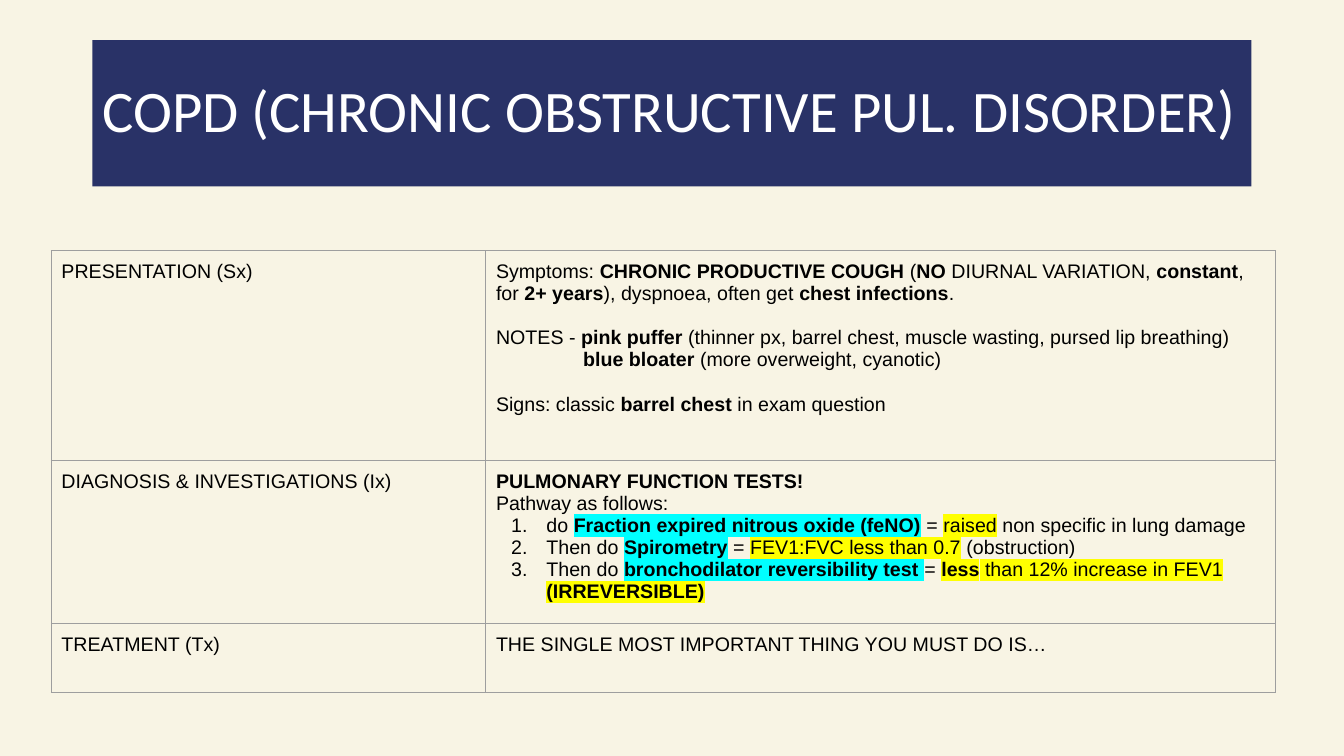
"""Build the COPD summary slide."""
from dataclasses import dataclass

from lxml import etree
from pptx import Presentation
from pptx.dml.color import RGBColor
from pptx.enum.shapes import MSO_SHAPE
from pptx.enum.text import MSO_ANCHOR, PP_ALIGN
from pptx.oxml.ns import qn
from pptx.util import Pt

RECTANGLE = MSO_SHAPE.RECTANGLE
MIDDLE = MSO_ANCHOR.MIDDLE
LEFT = PP_ALIGN.LEFT

CREAM = RGBColor(0xF8, 0xF4, 0xE4)
NAVY = RGBColor(0x29, 0x32, 0x67)
WHITE = RGBColor(0xFF, 0xFF, 0xFF)
BLACK = RGBColor(0x00, 0x00, 0x00)
GREY = RGBColor(0x9E, 0x9E, 0x9E)
CYAN = RGBColor(0x00, 0xFF, 0xFF)
YELLOW = RGBColor(0xFF, 0xFF, 0x00)

COLUMN_WIDTHS = (310.4, 564)
ROW_HEIGHTS = (149.8, 116.6, 49)
CELL_INSET = Pt(7.2)
BORDER_WIDTH = Pt(0.75)
BLANK_LINE = 16


@dataclass(frozen=True)
class Span:
    text: str
    bold: bool = False
    highlight: RGBColor | None = None


@dataclass(frozen=True)
class Line:
    spans: tuple[Span, ...]
    space_before: float = 0
    indent: float = 0
    hanging: float = 0


def plain(text: str, highlight: RGBColor | None = None) -> Span:
    return Span(text, highlight=highlight)


def strong(text: str, highlight: RGBColor | None = None) -> Span:
    return Span(text, True, highlight)


def step(*spans: Span) -> Line:
    return Line(spans, indent=36, hanging=25.2)


ROWS = (
    ("PRESENTATION (Sx)", (
        Line((plain("Symptoms: "), strong("CHRONIC PRODUCTIVE COUGH"), plain(" ("),
              strong("NO"), plain(" DIURNAL VARIATION, "), strong("constant"),
              plain(", for "), strong("2+ years"), plain("), dyspnoea, often get "),
              strong("chest infections"), plain("."))),
        Line((plain("NOTES - "), strong("pink puffer"),
              plain(" (thinner px, barrel chest, muscle wasting, pursed lip breathing)")),
             space_before=BLANK_LINE),
        Line((strong("blue bloater "), plain("(more overweight, cyanotic)")), indent=62.3),
        Line((plain("Signs: classic "), strong("barrel chest"), plain(" in exam question")),
             space_before=BLANK_LINE),
    )),
    ("DIAGNOSIS & INVESTIGATIONS (Ix)", (
        Line((strong("PULMONARY FUNCTION TESTS!"),)),
        Line((plain("Pathway as follows:"),)),
        step(plain("do "), strong("Fraction expired nitrous oxide (feNO)", CYAN),
             plain(" = "), plain("raised", YELLOW), plain(" non specific in lung damage")),
        step(plain("Then do "), strong("Spirometry", CYAN), plain(" = "),
             plain("FEV1:FVC less than 0.7", YELLOW), plain(" (obstruction)")),
        step(plain("Then do "), strong("bronchodilator reversibility test", CYAN),
             plain(" ", CYAN), plain("= "), strong("less", YELLOW),
             plain(" than 12% increase in FEV1 ", YELLOW), strong("(IRREVERSIBLE)", YELLOW)),
    )),
    ("TREATMENT (Tx)", (
        Line((plain("THE SINGLE MOST IMPORTANT THING YOU MUST DO IS…"),)),
    )),
)


def add_color(parent, tag: str, color: RGBColor) -> None:
    holder = etree.SubElement(parent, qn(tag))
    etree.SubElement(holder, qn("a:srgbClr"), val=str(color))


def add_text(paragraph, text: str, *, size: float = 14, font: str = "Arial",
             color: RGBColor = BLACK, bold: bool = False,
             highlight: RGBColor | None = None) -> None:
    run = paragraph.add_run()
    run.text = text
    run.font.size = Pt(size)
    run.font.bold = bold
    run.font.color.rgb = color
    if highlight is not None:
        add_color(run.font._element, "a:highlight", highlight)
    run.font.name = font


def format_line(paragraph, line: Line) -> None:
    paragraph.space_before = Pt(line.space_before)
    properties = paragraph._p.get_or_add_pPr()
    properties.set("marL", str(Pt(line.indent)))
    properties.set("indent", str(Pt(-line.hanging)))
    if line.hanging:
        add_color(properties, "a:buClr", BLACK)
        etree.SubElement(properties, qn("a:buAutoNum"), type="arabicPeriod")


def fill_cell(cell, lines: tuple[Line, ...]) -> None:
    cell.margin_left = cell.margin_right = CELL_INSET
    cell.margin_top = cell.margin_bottom = CELL_INSET
    properties = cell._tc.get_or_add_tcPr()
    for side in ("a:lnL", "a:lnR", "a:lnT", "a:lnB"):
        border = etree.SubElement(properties, qn(side), w=str(BORDER_WIDTH))
        add_color(border, "a:solidFill", GREY)
    cell.fill.background()
    frame = cell.text_frame
    for index, line in enumerate(lines):
        paragraph = frame.add_paragraph() if index else frame.paragraphs[0]
        format_line(paragraph, line)
        for span in line.spans:
            add_text(paragraph, span.text, bold=span.bold, highlight=span.highlight)


def add_summary_table(slide) -> None:
    table = slide.shapes.add_table(
        len(ROWS), len(COLUMN_WIDTHS), Pt(36.7), Pt(179),
        Pt(sum(COLUMN_WIDTHS)), Pt(sum(ROW_HEIGHTS))).table
    table.first_row = table.horz_banding = False
    for column, width in zip(table.columns, COLUMN_WIDTHS):
        column.width = Pt(width)
    for index, (heading, lines) in enumerate(ROWS):
        table.rows[index].height = Pt(ROW_HEIGHTS[index])
        fill_cell(table.cell(index, 0), (Line((plain(heading),)),))
        fill_cell(table.cell(index, 1), lines)


def add_title(slide) -> None:
    banner = slide.shapes.add_shape(RECTANGLE, Pt(66), Pt(28.75), Pt(828), Pt(104.4))
    banner.shadow.inherit = False
    banner.fill.solid()
    banner.fill.fore_color.rgb = NAVY
    banner.line.fill.background()
    frame = banner.text_frame
    frame.word_wrap = True
    frame.vertical_anchor = MIDDLE
    paragraph = frame.paragraphs[0]
    paragraph.alignment = LEFT
    paragraph.line_spacing = 0.9
    add_text(paragraph, "COPD (CHRONIC OBSTRUCTIVE PUL. DISORDER)",
             size=42, font="Calibri", color=WHITE)


def main() -> None:
    presentation = Presentation()
    presentation.slide_width = Pt(960)
    presentation.slide_height = Pt(540)
    slide = presentation.slides.add_slide(presentation.slide_layouts[6])
    slide.background.fill.solid()
    slide.background.fill.fore_color.rgb = CREAM
    add_summary_table(slide)
    add_title(slide)
    presentation.save("out.pptx")


if __name__ == "__main__":
    main()
